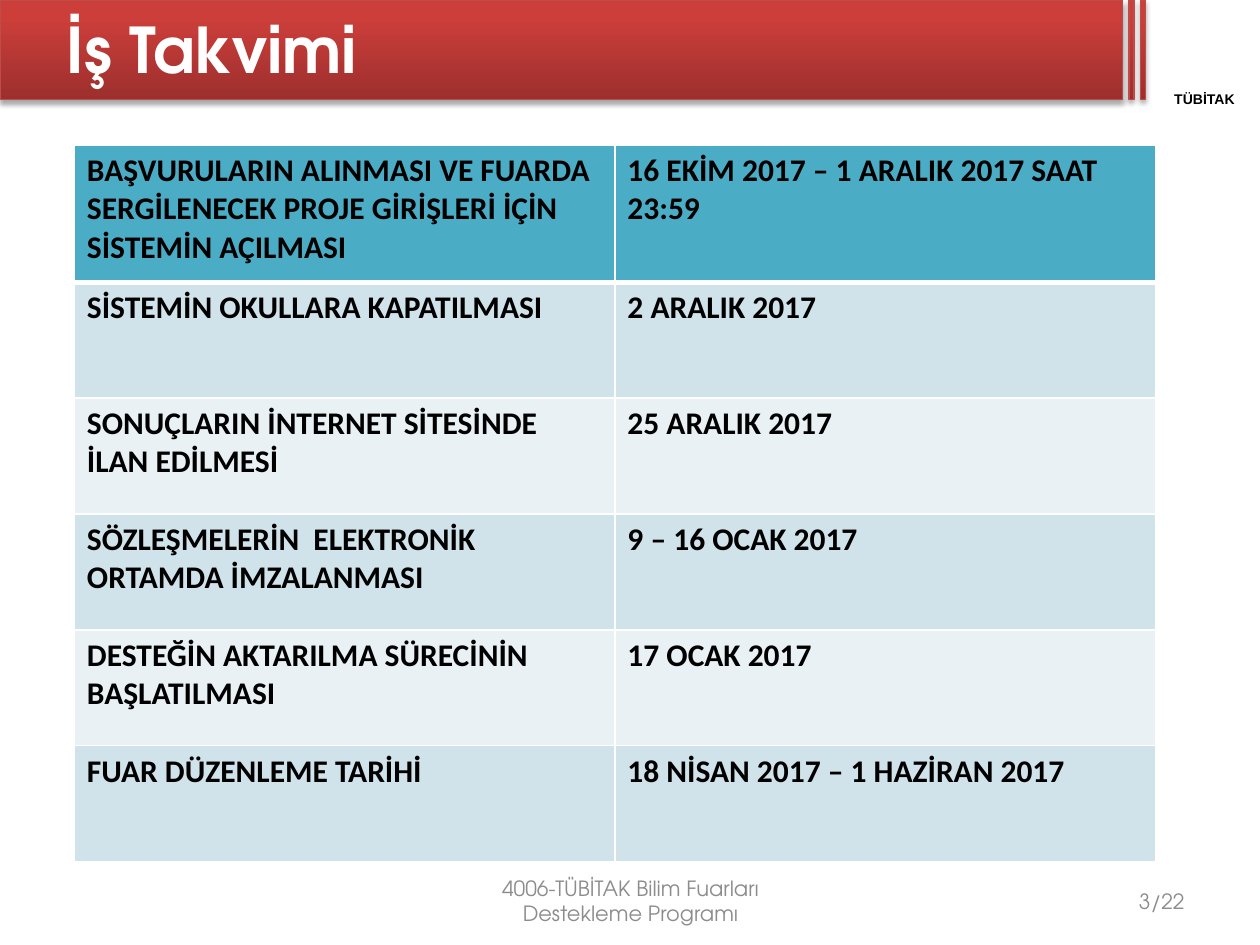
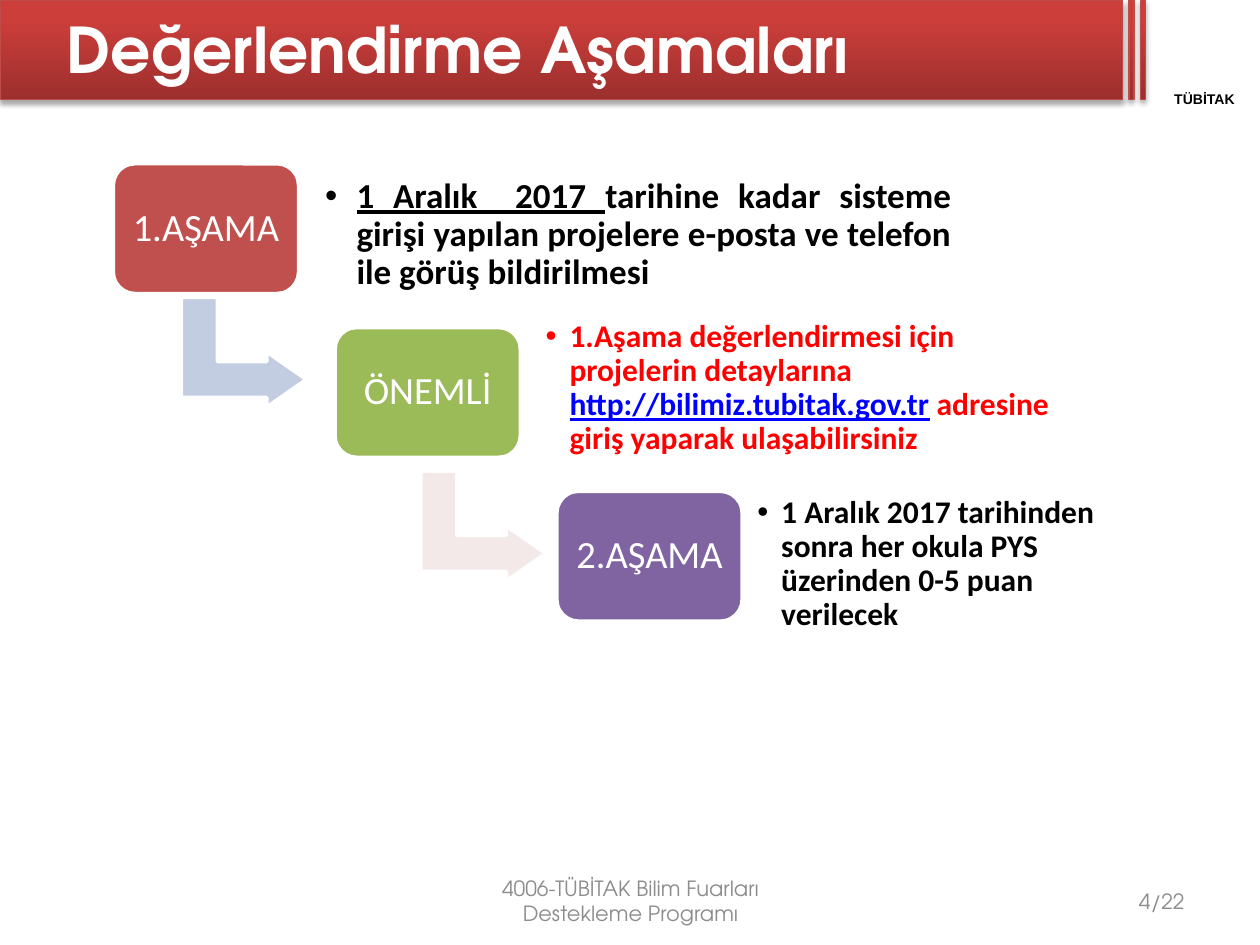
from dataclasses import dataclass

from lxml.etree import SubElement
from pptx import Presentation
from pptx.dml.color import RGBColor
from pptx.enum.shapes import MSO_SHAPE
from pptx.enum.text import MSO_ANCHOR, MSO_AUTO_SIZE, PP_ALIGN
from pptx.oxml import parse_xml
from pptx.oxml.ns import nsdecls, qn
from pptx.util import Inches, Pt


@dataclass(frozen=True)
class Theme:
    heading_font: str = "TeX Gyre Adventor"
    body_font: str = "Calibri"
    label_font: str = "Arial"
    title_size: int = 36
    stage_size: int = 22
    lead_size: int = 20
    body_size: int = 18
    footer_size: int = 12
    label_size: int = 8
    white: str = "FFFFFF"
    black: str = "000000"
    footer: str = "8C8C8C"
    warning: str = "FF0000"
    address: str = "0000FF"
    band_dark: str = "9C2F2D"
    band_light: str = "CB3E3A"
    band_line: str = "BF4C48"
    table_head: str = "4BACC6"
    table_rows: tuple = ("D0E3EA", "E9F1F5")
    stages: tuple = ("C0504D", "9BBB59", "8064A2")
    arrows: tuple = ("C2CDE1", "F4E9E9")


THEME = Theme()
PAGE_COUNT = 22
FOOTER = "4006-TÜBİTAK Bilim Fuarları Destekleme Programı"

SCHEDULE = [
    ("BAŞVURULARIN ALINMASI VE FUARDA SERGİLENECEK PROJE GİRİŞLERİ İÇİN SİSTEMİN AÇILMASI",
     "16 EKİM 2017 – 1 ARALIK 2017 SAAT 23:59"),
    ("SİSTEMİN OKULLARA KAPATILMASI", "2 ARALIK 2017"),
    ("SONUÇLARIN İNTERNET SİTESİNDE İLAN EDİLMESİ", "25 ARALIK 2017"),
    ("SÖZLEŞMELERİN  ELEKTRONİK ORTAMDA İMZALANMASI", "9 – 16 OCAK 2017"),
    ("DESTEĞİN AKTARILMA SÜRECİNİN BAŞLATILMASI", "17 OCAK 2017"),
    ("FUAR DÜZENLEME TARİHİ", "18 NİSAN 2017 – 1 HAZİRAN 2017"),
]


def apply_values(target, values):
    for attribute, value in values.items():
        setattr(target, attribute, value)


def style_font(font, name, size, color, **extras):
    apply_values(font, {"name": name, "size": Pt(size), **extras})
    font.color.rgb = RGBColor.from_string(color)


def set_margins(frame, margin):
    sides = ("left", "top", "right", "bottom")
    apply_values(frame, {f"margin_{side}": Inches(margin) for side in sides})


def paint(shape, fill, line, width):
    shape.fill.solid()
    shape.fill.fore_color.rgb = RGBColor.from_string(fill)
    outline(shape, line, width)
    shape.shadow.inherit = False


def outline(shape, color, width):
    shape.line.color.rgb = RGBColor.from_string(color)
    shape.line.width = Pt(width)


def add_label(slide, text, box, alignment, font, size, color, **extras):
    label = slide.shapes.add_textbox(*map(Inches, box))
    frame = label.text_frame
    apply_values(frame, {"word_wrap": True, "vertical_anchor": MSO_ANCHOR.MIDDLE})
    paragraph = frame.paragraphs[0]
    paragraph.alignment = alignment
    run = paragraph.add_run()
    run.text = text
    style_font(run.font, font, size, color, **extras)
    return frame


def add_band(slide, left, width):
    band = slide.shapes.add_shape(
        MSO_SHAPE.RECTANGLE, Inches(left), 0, Inches(width), Inches(0.79))
    band.fill.gradient()
    band.fill.gradient_angle = 90
    stops = ((0, THEME.band_dark), (0.8, THEME.band_light))
    for stop, (position, color) in zip(band.fill.gradient_stops, stops):
        stop.position = position
        stop.color.rgb = RGBColor.from_string(color)
    outline(band, THEME.band_line, 0.75)
    band.shadow.inherit = False
    effects = band.element.spPr.find(qn("a:effectLst"))
    effects.append(parse_xml(
        f'<a:outerShdw {nsdecls("a")} blurRad="{Pt(3.1)}" dist="{Pt(1.8)}" '
        f'dir="5400000" rotWithShape="0"><a:srgbClr val="{THEME.black}">'
        '<a:alpha val="35000"/></a:srgbClr></a:outerShdw>'))


def add_page(deck, title_text, number):
    slide = deck.slides.add_slide(deck.slide_layouts[5])
    for left, width in ((0, 8.91), (8.96, 0.04), (9.05, 0.04)):
        add_band(slide, left, width)
    agency = add_label(slide, "TÜBİTAK", (9.05, 0.72, 1.02, 0.13), PP_ALIGN.CENTER,
                       THEME.label_font, THEME.label_size, THEME.black, bold=True)
    agency.vertical_anchor = MSO_ANCHOR.TOP
    set_margins(agency, 0)

    title = slide.shapes.title
    title.element.getparent().append(title.element)
    apply_values(title, {"left": Inches(0.43), "top": 0,
                         "width": Inches(8.5), "height": Inches(0.77)})
    title.text = title_text
    apply_values(title.text_frame, {"vertical_anchor": MSO_ANCHOR.MIDDLE,
                                    "word_wrap": True,
                                    "auto_size": MSO_AUTO_SIZE.NONE})
    heading = title.text_frame.paragraphs[0]
    heading.alignment = PP_ALIGN.LEFT
    style_font(heading.runs[0].font, THEME.heading_font, THEME.title_size,
               THEME.white, bold=True)

    footers = (
        (FOOTER, (3.42, 6.95, 3.17, 0.4), PP_ALIGN.CENTER),
        (f"{number}/{PAGE_COUNT}", (7.17, 6.95, 2.33, 0.4), PP_ALIGN.RIGHT),
    )
    for text, box, alignment in footers:
        add_label(slide, text, box, alignment, THEME.heading_font,
                  THEME.footer_size, THEME.footer)
    return slide


def add_cell_borders(cell, top, bottom):
    properties = cell._tc.get_or_add_tcPr()
    for side, width in (("L", 1), ("R", 1), ("T", top), ("B", bottom)):
        border = SubElement(properties, qn(f"a:ln{side}"), w=str(Pt(width)))
        fill = SubElement(border, qn("a:solidFill"))
        SubElement(fill, qn("a:srgbClr"), val=THEME.white)


def add_schedule(slide, entries):
    schedule = slide.shapes.add_table(
        len(entries), 2, Inches(0.59), Inches(1.15), Inches(8.58), Inches(5.67)).table
    for column in schedule.columns:
        column.width = Inches(4.29)
    for index, entry in enumerate(entries):
        schedule.rows[index].height = Inches(0.92 if index else 1.09)
        fill = THEME.table_rows[(index - 1) % 2] if index else THEME.table_head
        for cell, text in zip(schedule.rows[index].cells, entry):
            add_cell_borders(cell, 3 if index == 1 else 1, 1 if index else 3)
            cell.fill.solid()
            cell.fill.fore_color.rgb = RGBColor.from_string(fill)
            cell.text = text
            style_font(cell.text_frame.paragraphs[0].runs[0].font, THEME.body_font,
                       THEME.body_size, THEME.black, bold=True)


def add_stage(slide, index, name):
    stage = slide.shapes.add_shape(
        MSO_SHAPE.ROUNDED_RECTANGLE, Inches(0.9 + 1.76 * index),
        Inches(1.3 + 1.3 * index), Inches(1.47), Inches(1.03))
    stage.adjustments[0] = 0.167
    paint(stage, THEME.stages[index], THEME.white, 2)
    frame = stage.text_frame
    apply_values(frame, {"word_wrap": True, "vertical_anchor": MSO_ANCHOR.MIDDLE})
    set_margins(frame, 0.09)
    paragraph = frame.paragraphs[0]
    apply_values(paragraph, {"alignment": PP_ALIGN.CENTER, "line_spacing": 0.9})
    run = paragraph.add_run()
    run.text = name
    style_font(run.font, THEME.body_font, THEME.stage_size, THEME.white)


def add_step_arrow(slide, index):
    arrow = slide.shapes.add_shape(
        MSO_SHAPE.BENT_UP_ARROW, Inches(1.5 + 1.9 * index),
        Inches(2.3 + 1.38 * index), Inches(0.87), Inches(0.99))
    arrow.rotation = 90
    for position, value in enumerate((0.328, 0.25, 0.358)):
        arrow.adjustments[position] = value
    paint(arrow, THEME.arrows[index], THEME.white, 2)


def add_explanation(slide, box, parts, size, indent, margin, alignment=PP_ALIGN.LEFT):
    explanation = slide.shapes.add_textbox(*map(Inches, box))
    frame = explanation.text_frame
    apply_values(frame, {"word_wrap": True, "vertical_anchor": MSO_ANCHOR.MIDDLE})
    set_margins(frame, margin)
    paragraph = frame.paragraphs[0]
    properties = paragraph._p.get_or_add_pPr()
    properties.set("marL", str(Inches(indent)))
    properties.set("indent", str(-Inches(indent)))
    SubElement(properties, qn("a:buFont"), typeface=THEME.label_font)
    SubElement(properties, qn("a:buChar"), char="•")
    apply_values(paragraph, {"alignment": alignment, "line_spacing": 0.9})
    for text, color, underline in parts:
        run = paragraph.add_run()
        run.text = text
        style_font(run.font, THEME.body_font, size, color,
                   bold=True, underline=underline)


def add_evaluation(slide):
    for index, name in enumerate(("1.AŞAMA", "ÖNEMLİ", "2.AŞAMA")):
        if index < len(THEME.arrows):
            add_step_arrow(slide, index)
        add_stage(slide, index, name)
    add_explanation(slide, (2.5, 1.45, 5.13, 0.83), [
        ("1 Aralık  2017 ", THEME.black, True),
        ("tarihine kadar sisteme girişi yapılan projelere e-posta ve telefon "
         "ile görüş bildirilmesi", THEME.black, False),
    ], THEME.lead_size, 0.25, 0.08, PP_ALIGN.JUSTIFY)
    add_explanation(slide, (4.26, 2.67, 4.32, 0.83), [
        ("1.Aşama değerlendirmesi için projelerin detaylarına ", THEME.warning, False),
        ("http://bilimiz.tubitak.gov.tr", THEME.address, True),
        (" adresine giriş yaparak ulaşabilirsiniz", THEME.warning, False),
    ], THEME.body_size, 0.19, 0.07)
    add_explanation(slide, (5.94, 3.95, 3.01, 1.06), [
        ("1 Aralık 2017 tarihinden sonra her okula PYS üzerinden 0-5 puan verilecek",
         THEME.black, False),
    ], THEME.body_size, 0.19, 0.07)


def main():
    deck = Presentation()
    apply_values(deck, {"slide_width": Inches(10), "slide_height": Inches(7.5)})
    add_schedule(add_page(deck, "İş Takvimi", 3), SCHEDULE)
    add_evaluation(add_page(deck, "Değerlendirme Aşamaları", 4))
    deck.save("out.pptx")


if __name__ == "__main__":
    main()
